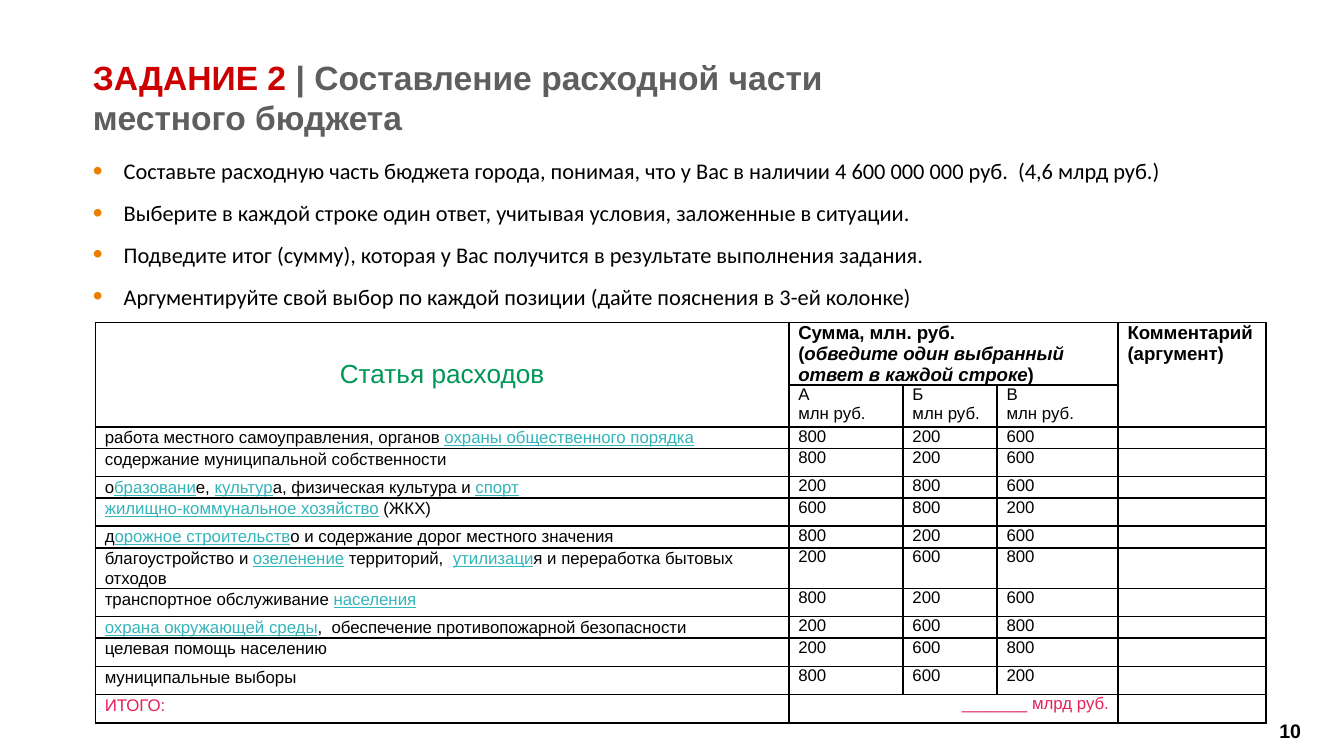
"""Build the slide with the city budget spending task and its table."""
import dataclasses
import typing

import lxml.etree
import pptx
import pptx.dml.color
import pptx.enum.text
import pptx.oxml.ns
import pptx.util

Inches = pptx.util.Inches
Pt = pptx.util.Pt
qn = pptx.oxml.ns.qn
ANCHOR = pptx.enum.text.MSO_ANCHOR
ALIGN = pptx.enum.text.PP_ALIGN

COLORS = {
    "red": "CC0000",
    "gray": "5E5E5E",
    "orange": "ED7D00",
    "black": "000000",
    "white": "FFFFFF",
    "green": "009655",
    "teal": "33B5BA",
    "pink": "E5205A",
}


@dataclasses.dataclass(frozen=True)
class Style:
    size: float
    color: str = "black"
    bold: bool = False
    italic: bool = False
    underline: bool = False
    font: str = "Arial"


class Expense(typing.NamedTuple):
    name: str
    amounts: tuple[int, int, int]
    height: float


CELL = Style(9)
LINK = Style(9, "teal", underline=True)
HEAD = Style(10, bold=True)
HEAD_NOTE = Style(10, bold=True, italic=True)
TOTAL = Style(9, "pink")
BULLET = Style(12, font="Calibri")

BULLETS = [
    "Составьте расходную часть бюджета города, понимая, что у Вас в наличии 4 600 000 000 руб.  (4,6 млрд руб.)",
    "Выберите в каждой строке один ответ, учитывая условия, заложенные в ситуации.",
    "Подведите итог (сумму), которая у Вас получится в результате выполнения задания.",
    "Аргументируйте свой выбор по каждой позиции (дайте пояснения в 3-ей колонке)",
]
EXPENSES = [
    Expense("работа местного самоуправления, органов |охраны общественного порядка", (800, 200, 600), 0.16),
    Expense("содержание муниципальной собственности", (800, 200, 600), 0.21),
    Expense("о|бразовани|е, |культур|а, физическая культура и |спорт", (200, 800, 600), 0.16),
    Expense("|жилищно-коммунальное хозяйство| (ЖКХ)", (600, 800, 200), 0.21),
    Expense("д|орожное строительств|о и содержание дорог местного значения", (800, 200, 600), 0.16),
    Expense("благоустройство и |озеленение| территорий,  |утилизаци|я и переработка бытовых отходов",
            (200, 600, 800), 0.25),
    Expense("транспортное обслуживание |населения", (800, 200, 600), 0.21),
    Expense("|охрана окружающей среды|,  обеспечение противопожарной безопасности", (200, 600, 800), 0.16),
    Expense("целевая помощь населению", (200, 600, 800), 0.21),
    Expense("муниципальные выборы", (800, 600, 200), 0.21),
]
COLUMNS = [5.16, 0.85, 0.7, 0.9, 1.1]
HEIGHTS = [0.31, 0.23, *(e.height for e in EXPENSES), 0.21]


def rgb(name: str) -> pptx.dml.color.RGBColor:
    return pptx.dml.color.RGBColor.from_string(COLORS[name])


def write(p, text: str, style: Style, accent: Style | None = None) -> None:
    """Add text to a paragraph, giving every second |-separated piece the accent style."""
    for i, piece in enumerate(text.split("|") if accent else [text]):
        look = accent if i % 2 else style
        for j, line in enumerate(piece.split("\n")):
            if j:
                p.add_line_break()
                lxml.etree.SubElement(p._p[-1], qn("a:rPr"), sz=str(int(look.size * 100)))
            if not line:
                continue
            r = p.add_run()
            r.text = line
            r.font.name = look.font
            r.font.size = Pt(look.size)
            r.font.color.rgb = rgb(look.color)
            r.font.bold = look.bold
            r.font.italic = look.italic
            r.font.underline = look.underline


def place(sp, left: float, top: float, width: float, height: float, margin: float = 0):
    """Move a shape and prepare its text frame."""
    sp.left, sp.top, sp.width, sp.height = map(Inches, (left, top, width, height))
    tf = sp.text_frame
    tf.word_wrap = True
    tf.auto_size = pptx.enum.text.MSO_AUTO_SIZE.NONE
    tf.margin_left = tf.margin_right = tf.margin_top = tf.margin_bottom = Inches(margin)
    return tf


def add_bullet(p, text: str, first: bool) -> None:
    pPr = p._p.get_or_add_pPr()
    pPr.set("marL", str(Inches(0.23)))
    pPr.set("indent", str(Inches(-0.23)))
    color = lxml.etree.SubElement(pPr, qn("a:buClr"))
    lxml.etree.SubElement(color, qn("a:srgbClr"), val=COLORS["orange"])
    lxml.etree.SubElement(pPr, qn("a:buSzPct"), val="125000")
    lxml.etree.SubElement(pPr, qn("a:buFont"), typeface="Arial")
    lxml.etree.SubElement(pPr, qn("a:buChar"), char="•")
    p.space_before = Pt(0 if first else 4)
    p.space_after = Pt(4)
    p.alignment = ALIGN.LEFT
    write(p, text, BULLET)


def format_cell(cell) -> None:
    """Give a cell black borders, a white fill, tight margins and a small base size."""
    tcPr = cell._tc.get_or_add_tcPr()
    for side in ("a:lnL", "a:lnR", "a:lnT", "a:lnB"):
        ln = lxml.etree.SubElement(tcPr, qn(side), w=str(Pt(1)))
        fill = lxml.etree.SubElement(ln, qn("a:solidFill"))
        lxml.etree.SubElement(fill, qn("a:srgbClr"), val=COLORS["black"])
    cell.fill.solid()
    cell.fill.fore_color.rgb = rgb("white")
    cell.margin_left = cell.margin_right = Inches(0.07)
    cell.margin_top = cell.margin_bottom = 0
    if not cell.text_frame.text:
        p = cell.text_frame.paragraphs[0]
        lxml.etree.SubElement(p._p, qn("a:endParaRPr"), sz="900")


def fill_cell(cell, text: str, style: Style = CELL, accent: Style | None = None):
    p = cell.text_frame.paragraphs[0]
    write(p, text, style, accent)
    return p


def fill_name(cell, text: str, style: Style = CELL) -> None:
    p = fill_cell(cell, text, style, LINK)
    p.line_spacing = 1.08
    p.space_after = Pt(1.2)


def add_budget_table(s) -> None:
    frame = s.shapes.add_table(len(HEIGHTS), len(COLUMNS), Inches(0.71), Inches(2.4), Inches(8.7), Inches(3.02))
    table = frame.table
    table.first_row = table.horz_banding = False
    for column, width in zip(table.columns, COLUMNS):
        column.width = Inches(width)
    for row, height in zip(table.rows, HEIGHTS):
        row.height = Inches(height)
    last = len(HEIGHTS) - 1
    for start, end in [((0, 0), (1, 0)), ((0, 1), (0, 3)), ((0, 4), (1, 4)), ((last, 1), (last, 3))]:
        table.cell(*start).merge(table.cell(*end))

    fill_cell(table.cell(0, 0), "Статья расходов", Style(14, "green")).alignment = ALIGN.CENTER
    table.cell(0, 0).vertical_anchor = ANCHOR.MIDDLE
    fill_cell(table.cell(0, 1), "Сумма, млн. руб. \n(|обведите один выбранный ответ в каждой строке|)", HEAD, HEAD_NOTE)
    fill_cell(table.cell(0, 4), "Комментарий (аргумент)", HEAD)
    for col, letter in enumerate("АБВ", 1):
        cell = table.cell(1, col)
        fill_cell(cell, letter)
        write(cell.text_frame.add_paragraph(), "млн руб.", CELL)
    for row, expense in enumerate(EXPENSES, 2):
        fill_name(table.cell(row, 0), expense.name)
        for col, amount in enumerate(expense.amounts, 1):
            fill_cell(table.cell(row, col), str(amount))
    fill_name(table.cell(last, 0), "ИТОГО:", TOTAL)
    fill_cell(table.cell(last, 1), "_______ млрд руб.", TOTAL).alignment = ALIGN.RIGHT
    for cell in table.iter_cells():
        format_cell(cell)


def main() -> None:
    prs = pptx.Presentation()
    prs.slide_width, prs.slide_height = Inches(10), Inches(10 * 9 / 16)
    s = prs.slides.add_slide(prs.slide_layouts[1])

    tf = place(s.shapes.title, 0.69, 0.42, 7.53, 0.75)
    tf.vertical_anchor = ANCHOR.TOP
    p = tf.paragraphs[0]
    p.alignment = ALIGN.LEFT
    write(p, "ЗАДАНИЕ 2 ", Style(18, "red", bold=True))
    write(p, "| Составление расходной части\nместного бюджета", Style(18, "gray", bold=True))

    tf = place(s.placeholders[1], 0.69, 1.17, 8.85, 1.18)
    for i, text in enumerate(BULLETS):
        add_bullet(tf.add_paragraph() if i else tf.paragraphs[0], text, i == 0)

    add_budget_table(s)

    tf = place(s.shapes.add_textbox(0, 0, 0, 0), 9.2, 5.29, 0.8, 0.3, 0.06)
    tf.vertical_anchor = ANCHOR.MIDDLE
    tf.paragraphs[0].alignment = ALIGN.CENTER
    write(tf.paragraphs[0], "10", Style(10.5, bold=True))
    prs.save("out.pptx")


if __name__ == "__main__":
    main()
